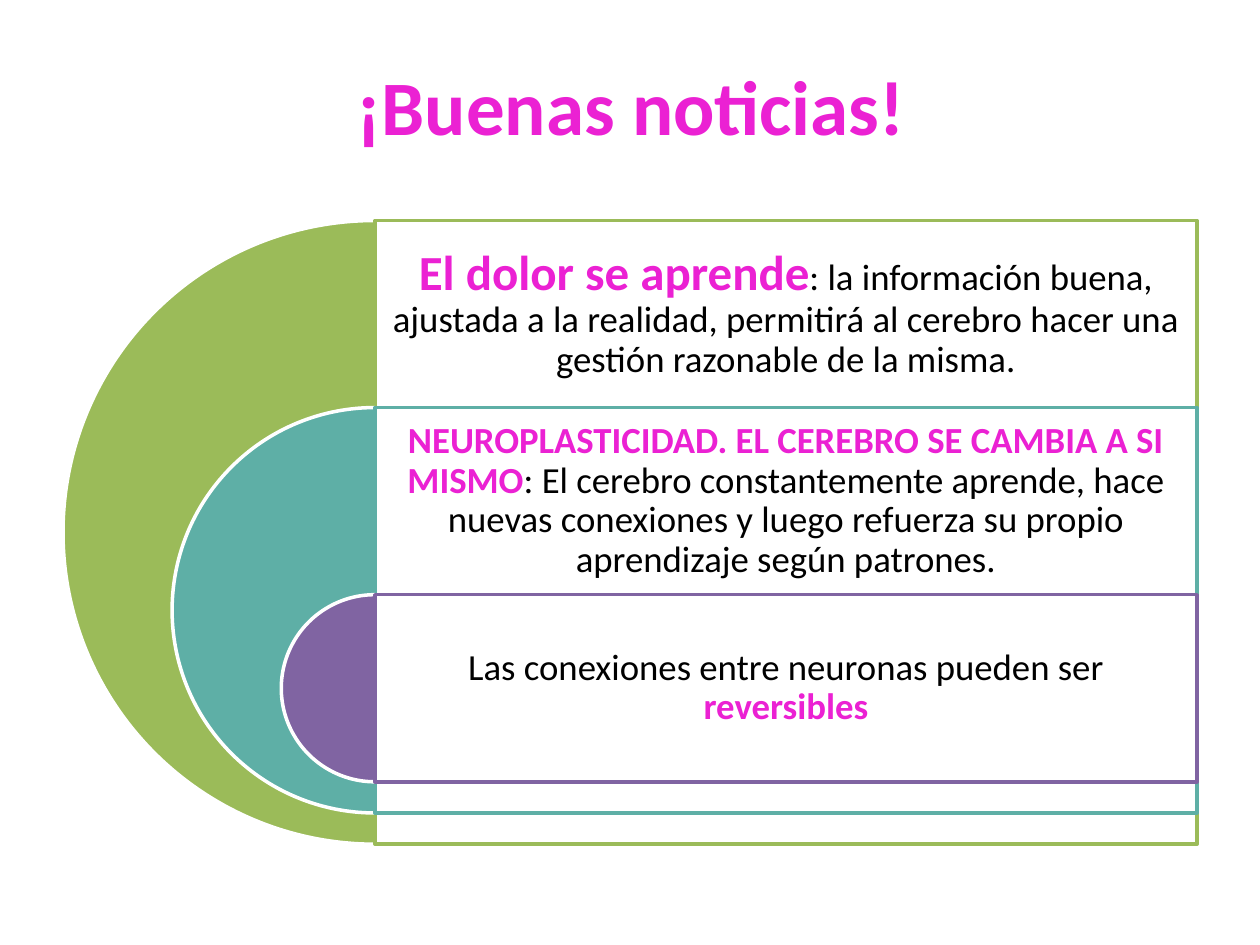
from lxml.etree import SubElement
from pptx import Presentation
from pptx.dml.color import RGBColor
from pptx.enum.shapes import MSO_SHAPE
from pptx.enum.text import MSO_ANCHOR, PP_ALIGN
from pptx.oxml.ns import qn
from pptx.util import Inches, Pt

MAGENTA, BLACK, WHITE = "EB21D3", "000000", "FFFFFF"

LEVELS = [
    ("9BBB59", 0.12, [
        ("El dolor se aprende", 28, True),
        (": la información buena, ajustada a la realidad, permitirá al cerebro "
         "hacer una gestión razonable de la misma.", 21, False)]),
    ("5EAFA6", 0.09, [
        ("NEUROPLASTICIDAD. EL CEREBRO SE CAMBIA A SI MISMO", 21, True),
        (": El cerebro constantemente aprende, hace nuevas conexiones y luego "
         "refuerza su propio aprendizaje según patrones.", 21, False)]),
    ("8064A2", 0.09, [
        ("Las conexiones entre neuronas pueden ser ", 21, False),
        ("reversibles", 21, True)]),
]


def paint(color_format, color):
    color_format.rgb = RGBColor.from_string(color)


def add_run(paragraph, text, size, emphasized):
    run = paragraph.add_run()
    run.text = text
    for name, value in {"name": "Calibri", "size": Pt(size), "bold": emphasized}.items():
        setattr(run.font, name, value)
    paint(run.font.color, MAGENTA if emphasized else BLACK)


def add_outlined(slide, preset, box, fill, line):
    shape = slide.shapes.add_shape(preset, *map(Inches, box))
    shape.shadow.inherit = False
    shape.fill.solid()
    paint(shape.fill.fore_color, fill)
    paint(shape.line.color, line)
    shape.line.width = Pt(2)
    return shape


def add_title(slide, left, top, width, height):
    title = slide.shapes.title
    box = {"left": left, "top": top, "width": width, "height": height}
    for name, value in box.items():
        setattr(title, name, Inches(value))
    title.text_frame.vertical_anchor = MSO_ANCHOR.MIDDLE
    heading = title.text_frame.paragraphs[0]
    heading.alignment = PP_ALIGN.CENTER
    add_run(heading, "¡Buenas noticias!", 44, True)


def add_message(slide, box, inset, parts):
    frame = slide.shapes.add_textbox(*map(Inches, box)).text_frame
    margins = ("margin_left", "margin_top", "margin_right", "margin_bottom")
    settings = {"word_wrap": True, "vertical_anchor": MSO_ANCHOR.MIDDLE}
    settings.update(dict.fromkeys(margins, Inches(inset)))
    for name, value in settings.items():
        setattr(frame, name, value)
    message = frame.paragraphs[0]
    message.alignment = PP_ALIGN.CENTER
    message.line_spacing = 0.9
    for part in parts:
        add_run(message, *part)


def add_nested_targets(slide, left, top, width, height):
    center = left + height / 2
    panel_width = width - height / 2
    band = height * 0.3
    for index, (color, inset, parts) in enumerate(LEVELS):
        diameter = height * (1 - 0.35 * index)
        level_top = top + band * index
        half_disc = add_outlined(
            slide, MSO_SHAPE.PIE,
            (center - diameter / 2, level_top, diameter, diameter), color, WHITE)
        half_disc.adjustments[0] = 54
        half_disc.adjustments[1] = 162
        panel = add_outlined(
            slide, MSO_SHAPE.RECTANGLE,
            (center, level_top, panel_width, diameter), WHITE, color)
        tint = panel.fill._xPr.find(qn("a:solidFill"))[0]
        SubElement(tint, qn("a:alpha"), val="90000")
        add_message(slide, (center, level_top, panel_width, band), inset, parts)


def main():
    presentation = Presentation()
    presentation.slide_width = Inches(10)
    presentation.slide_height = Inches(7.5)
    slide = presentation.slides.add_slide(presentation.slide_layouts[5])
    add_title(slide, 0.51, 0.21, 9, 1.25)
    add_nested_targets(slide, 0.5, 1.75, 9, 4.95)
    presentation.save("out.pptx")


if __name__ == "__main__":
    main()
